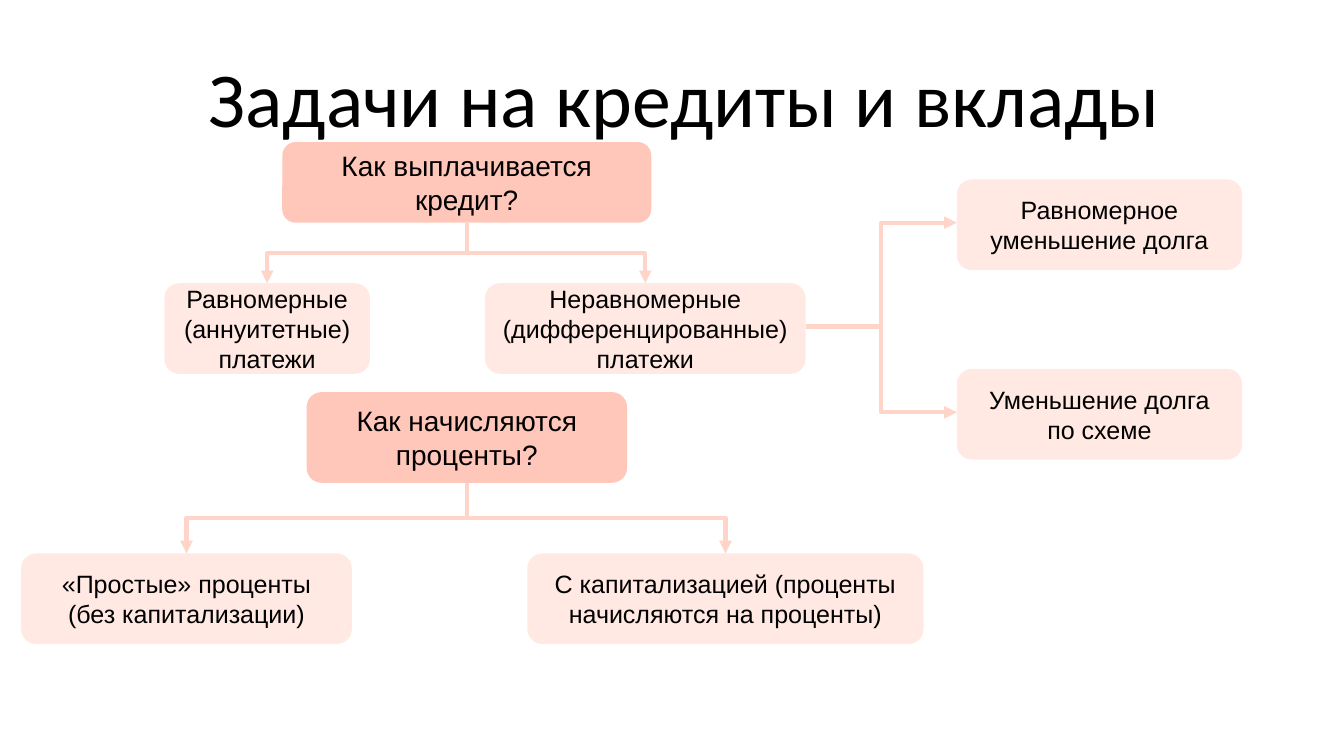
from lxml.etree import SubElement
from pptx import Presentation
from pptx.dml.color import RGBColor
from pptx.enum.shapes import MSO_CONNECTOR, MSO_SHAPE
from pptx.enum.text import MSO_ANCHOR, PP_ALIGN
from pptx.oxml.ns import qn
from pptx.util import Inches, Pt

BLACK = RGBColor(0x00, 0x00, 0x00)
QUESTION_FILL = RGBColor(0xFF, 0xC6, 0xBA)
ANSWER_FILL = RGBColor(0xFF, 0xE9, 0xE2)
ARROW_COLOR = RGBColor(0xFF, 0xD5, 0xCA)


class Diagram:
    title_font, title_size = "Calibri", 55.5
    box_font, question_size, answer_size = "Arial", 20, 17.9
    answer_height = 0.9
    arrow_width = 3
    side_lift = 0.02  # side arrows run slightly above the box middle

    def __init__(self, slide):
        self.slide = slide

    def add_text(self, shape, text, font, size, anchor, inset_x, inset_y):
        frame = shape.text_frame
        frame.word_wrap = True
        frame.vertical_anchor = anchor
        frame.margin_left = frame.margin_right = Inches(inset_x)
        frame.margin_top = frame.margin_bottom = Inches(inset_y)
        paragraph = frame.paragraphs[0]
        paragraph.alignment = PP_ALIGN.CENTER
        run = paragraph.add_run()
        run.text = text
        run.font.name = font
        run.font.size = Pt(size)
        run.font.color.rgb = BLACK
        return paragraph

    def title(self, text, left, top, width, height):
        heading = self.slide.shapes.add_textbox(
            Inches(left), Inches(top), Inches(width), Inches(height))
        paragraph = self.add_text(heading, text, self.title_font, self.title_size,
                                  MSO_ANCHOR.BOTTOM, 0.1, 0)
        paragraph.line_spacing = 0.7

    def box(self, text, left, top, width, height, fill, size):
        box = self.slide.shapes.add_shape(
            MSO_SHAPE.ROUNDED_RECTANGLE,
            Inches(left), Inches(top), Inches(width), Inches(height))
        box.shadow.inherit = False
        box.fill.solid()
        box.fill.fore_color.rgb = fill
        box.line.fill.background()
        self.add_text(box, text, self.box_font, size, MSO_ANCHOR.MIDDLE, 0.11, 0.05)
        return box

    def question(self, text, left, top, width, height):
        return self.box(text, left, top, width, height,
                        QUESTION_FILL, self.question_size)

    def answer(self, text, left, top, width):
        return self.box(text, left, top, width, self.answer_height,
                        ANSWER_FILL, self.answer_size)

    def elbow(self, begin_x, begin_y, end_x, end_y):
        arrow = self.slide.shapes.add_connector(
            MSO_CONNECTOR.ELBOW, int(begin_x), int(begin_y), int(end_x), int(end_y))
        arrow.line.color.rgb = ARROW_COLOR
        arrow.line.width = Pt(self.arrow_width)
        properties = arrow._element.spPr
        SubElement(properties.find(qn("a:ln")), qn("a:tailEnd"), type="triangle")
        SubElement(properties, qn("a:effectLst"))
        return arrow

    def branch_down(self, parent, child):
        """Elbow from the parent's bottom to the child's top, as a turned bent connector."""
        begin_x = parent.left + parent.width / 2
        begin_y = parent.top + parent.height
        end_x = child.left + child.width / 2
        center_x, center_y = (begin_x + end_x) / 2, (begin_y + child.top) / 2
        half_drop = (child.top - begin_y) / 2
        half_reach = abs(end_x - begin_x) / 2
        side, turn = (1, 270) if end_x > begin_x else (-1, 90)
        arrow = self.elbow(center_x + side * half_drop, center_y - half_reach,
                           center_x - side * half_drop, center_y + half_reach)
        arrow._element.spPr.find(qn("a:xfrm")).set("rot", str(turn * 60000))

    def branch_right(self, parent, child):
        lift = Inches(self.side_lift)
        self.elbow(parent.left + parent.width, parent.top + parent.height / 2 - lift,
                   child.left, child.top + child.height / 2 - lift)


def main():
    presentation = Presentation()
    presentation.slide_width = Inches(13.33)
    presentation.slide_height = Inches(7.5)
    diagram = Diagram(presentation.slides.add_slide(presentation.slide_layouts[6]))

    diagram.title("Задачи на кредиты и вклады", 0.86, 0.61, 11.87, 0.78)

    repayment = diagram.question("Как выплачивается кредит?", 2.8, 1.41, 3.66, 0.8)
    annuity = diagram.answer("Равномерные (аннуитетные) платежи", 1.63, 2.81, 2.04)
    differentiated = diagram.answer(
        "Неравномерные (дифференцированные) платежи", 4.81, 2.81, 3.18)
    even_decrease = diagram.answer("Равномерное уменьшение долга", 9.49, 1.78, 2.83)
    scheme_decrease = diagram.answer("Уменьшение долга по схеме", 9.49, 3.66, 2.83)
    for payment in (annuity, differentiated):
        diagram.branch_down(repayment, payment)
    for decrease in (even_decrease, scheme_decrease):
        diagram.branch_right(differentiated, decrease)

    interest = diagram.question("Как начисляются проценты?", 3.04, 3.89, 3.18, 0.9)
    simple = diagram.answer("«Простые» проценты (без капитализации)", 0.21, 5.49, 3.28)
    compound = diagram.answer(
        "С капитализацией (проценты начисляются на проценты)", 5.23, 5.49, 3.93)
    for accrual in (simple, compound):
        diagram.branch_down(interest, accrual)

    presentation.save("out.pptx")


if __name__ == "__main__":
    main()
